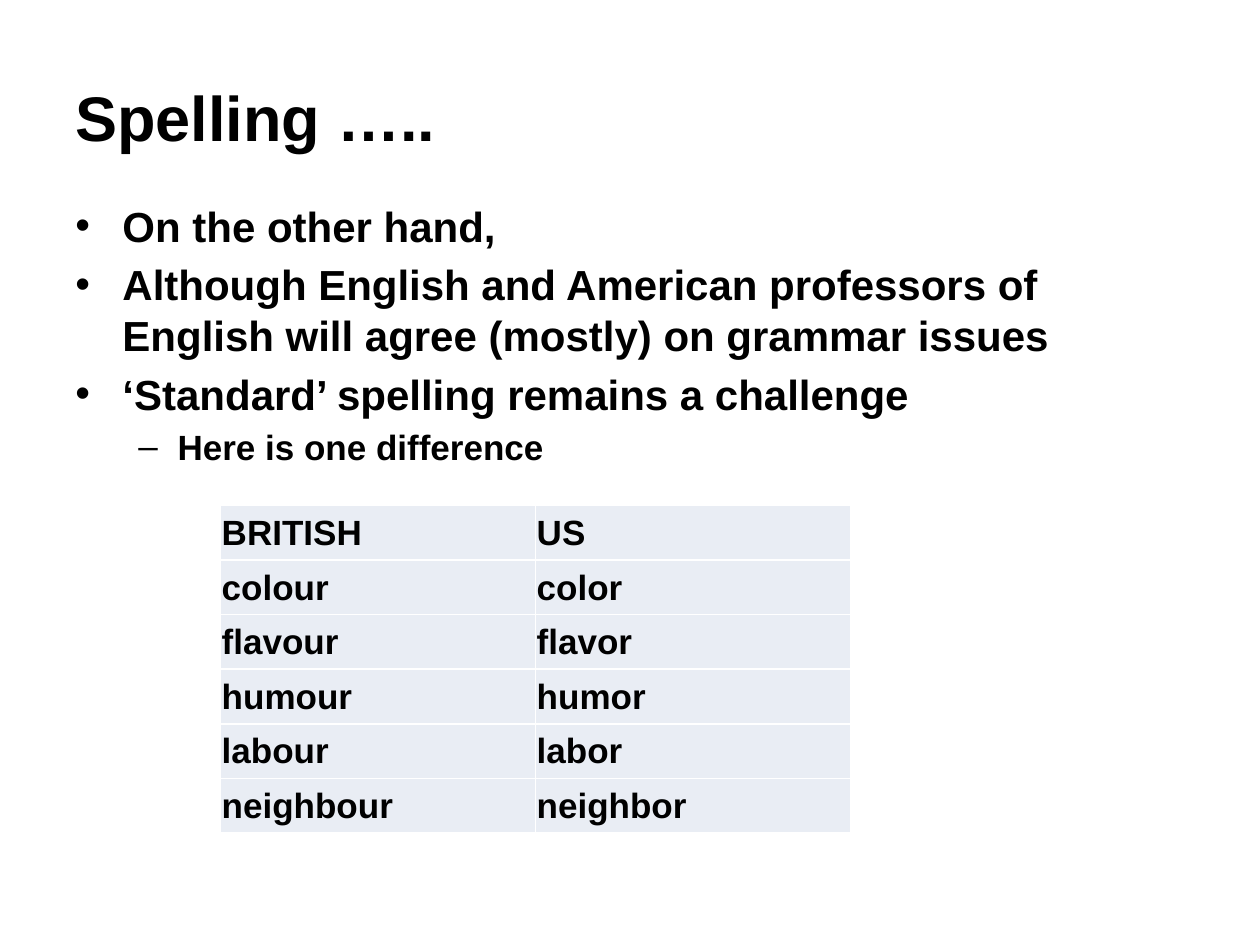
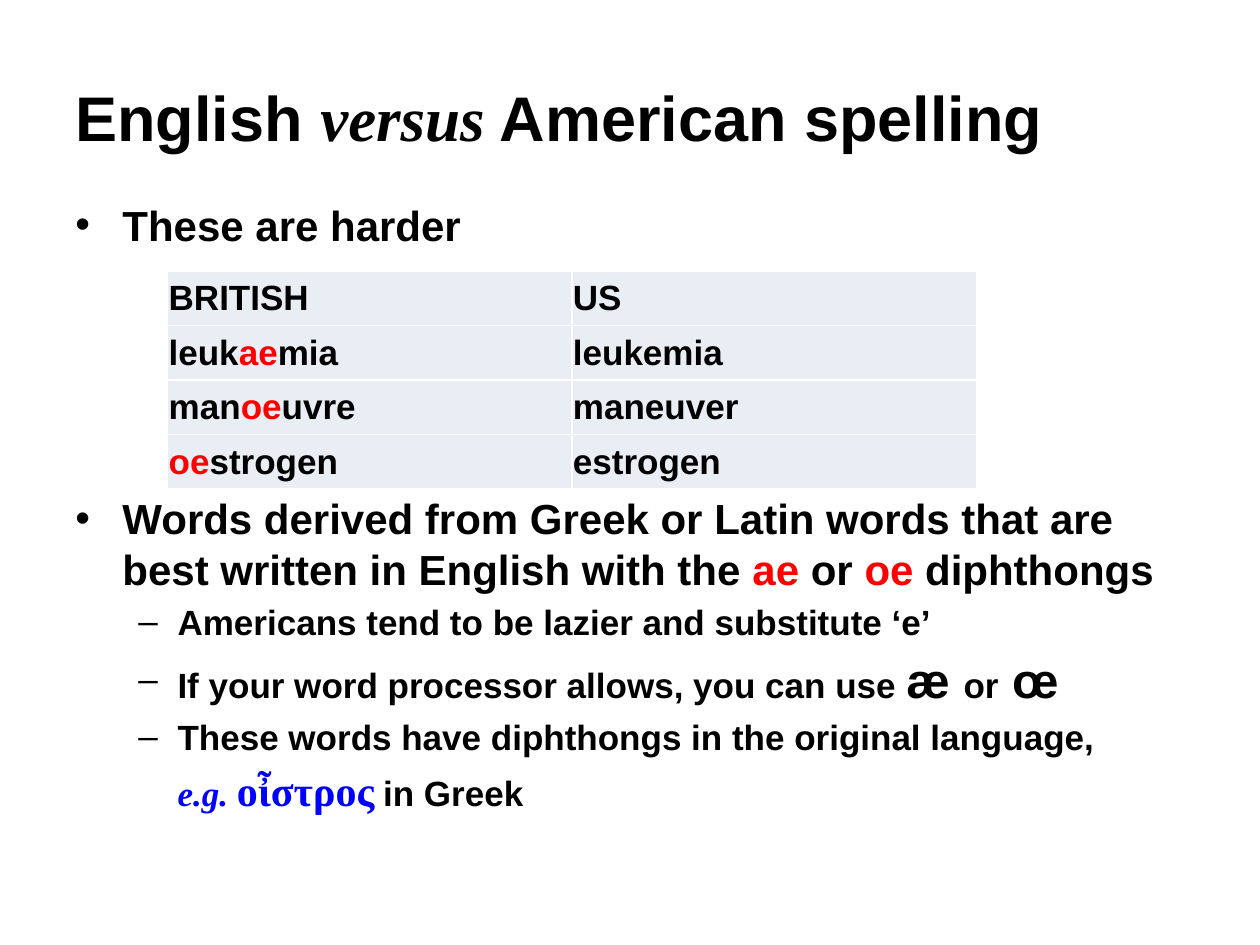
from lxml.etree import SubElement
from pptx import Presentation
from pptx.dml.color import RGBColor
from pptx.enum.text import MSO_ANCHOR as Anchor
from pptx.oxml.ns import qn
from pptx.util import Cm, Pt

BLACK, RED, BLUE, WHITE, CELL = "000000", "FF0000", "0000FF", "FFFFFF", "E9EDF4"
SANS, SERIF = "Arial", "Times New Roman"
TITLE_SIZE, CELL_SIZE, ROW_HEIGHT = 36, 20, 1.1
# level: (bullet, text size, left margin in cm, first-line indent in cm)
LEVELS = {
    "point": ("•", 24, 0.95, -0.95),
    "detail": ("–", 20, 2.06, -0.79),
    "continued": (None, 20, 2.06, 0),
}
TABLE_GAP = 139  # points of space that clear the table between two bullets


def color(hex_code):
    return RGBColor.from_string(hex_code)


def add_runs(paragraph, pieces, size):
    """Add plain strings, or (text, changes) pairs, as bold runs."""
    for piece in [pieces] if isinstance(pieces, str) else pieces:
        text, changes = (piece, {}) if isinstance(piece, str) else piece
        run = paragraph.add_run()
        run.text = text
        run.font.bold = True
        run.font.italic = changes.get("italic", False)
        run.font.name = changes.get("face", SANS)
        run.font.size = Pt(changes.get("size", size))
        run.font.color.rgb = color(changes.get("hue", BLACK))


red, large = {"hue": RED}, {"size": 28}
greek = {"face": SERIF, "hue": BLUE}

lessons = [
    {
        "title": "Spelling …..",
        "body_top": 3.91,
        "body": [
            ("point", "On the other hand,"),
            ("point", "Although English and American professors of English "
                      "will agree (mostly) on grammar issues"),
            ("point", "‘Standard’ spelling remains a challenge"),
            ("detail", "Here is one difference"),
        ],
        "table_at": (4.45, 10.19),
        "column_width": 6.35,
        "words": [
            ("BRITISH", "US"),
            ("colour", "color"),
            ("flavour", "flavor"),
            ("humour", "humor"),
            ("labour", "labor"),
            ("neighbour", "neighbor"),
        ],
    },
    {
        "title": ["English ", ("versus", {"face": SERIF, "italic": True}),
                  " American spelling"],
        "body_top": 3.89,
        "body": [
            ("point", "These are harder"),
            ("point", ["Words derived from Greek or Latin words that are best "
                       "written in English with the ",
                       ("ae", red), " or ", ("oe", red), " diphthongs"]),
            ("detail", "Americans tend to be lazier and substitute ‘e’"),
            ("detail", ["If your word processor allows, you can use ",
                        ("æ ", large), "or", (" œ", large)]),
            ("detail", "These words have diphthongs in the original language,"),
            ("continued", [("e.g. ", {**greek, "italic": True}),
                           ("οἶστρος", {**greek, "size": 24}),
                           (" ", {"face": SERIF}), "in Greek"]),
        ],
        "gap_before": 1,
        "table_at": (3.38, 5.46),
        "column_width": 8.15,
        "words": [
            ("BRITISH", "US"),
            (["leuk", ("ae", red), "mia"], "leukemia"),
            (["man", ("oe", red), "uvre"], "maneuver"),
            ([("oe", red), "strogen"], "estrogen"),
        ],
    },
]

deck = Presentation()
deck.slide_width, deck.slide_height = Cm(25.4), Cm(19.05)

for lesson in lessons:
    slide = deck.slides.add_slide(deck.slide_layouts[6])

    title = slide.shapes.add_textbox(Cm(1.27), Cm(0.76), Cm(22.86), Cm(3.18)).text_frame
    title.word_wrap = True
    title.vertical_anchor = Anchor.MIDDLE
    add_runs(title.paragraphs[0], lesson["title"], TITLE_SIZE)

    body = slide.shapes.add_textbox(
        Cm(1.27), Cm(lesson["body_top"]), Cm(22.86), Cm(12.57)).text_frame
    body.word_wrap = True
    for index, (level, pieces) in enumerate(lesson["body"]):
        bullet, size, margin, indent = LEVELS[level]
        paragraph = body.add_paragraph() if index else body.paragraphs[0]
        after_table = index == lesson.get("gap_before")
        paragraph.space_before = Pt(TABLE_GAP if after_table else size * 0.2)
        properties = paragraph._p.get_or_add_pPr()
        properties.set("marL", str(Cm(margin)))
        properties.set("indent", str(Cm(indent)))
        if bullet:
            SubElement(properties, qn("a:buFont"), typeface=SANS)
            SubElement(properties, qn("a:buChar"), char=bullet)
        add_runs(paragraph, pieces, size)

    words, width = lesson["words"], lesson["column_width"]
    left, top = lesson["table_at"]
    spellings = slide.shapes.add_table(
        len(words), 2, Cm(left), Cm(top), Cm(2 * width), Cm(ROW_HEIGHT * len(words))).table
    for row, pair in enumerate(words):
        spellings.rows[row].height = Cm(ROW_HEIGHT)
        for column, pieces in enumerate(pair):
            cell = spellings.cell(row, column)
            cell.vertical_anchor = Anchor.MIDDLE
            cell.margin_left = cell.margin_right = cell.margin_top = Cm(0.02)
            cell.margin_bottom = 0
            for edge in ("a:lnL", "a:lnR", "a:lnT", "a:lnB"):
                border = SubElement(cell._tc.get_or_add_tcPr(), qn(edge), w=str(Pt(1)))
                SubElement(SubElement(border, qn("a:solidFill")), qn("a:srgbClr"), val=WHITE)
            cell.fill.solid()
            cell.fill.fore_color.rgb = color(CELL)
            add_runs(cell.text_frame.paragraphs[0], pieces, CELL_SIZE)

deck.save("out.pptx")
